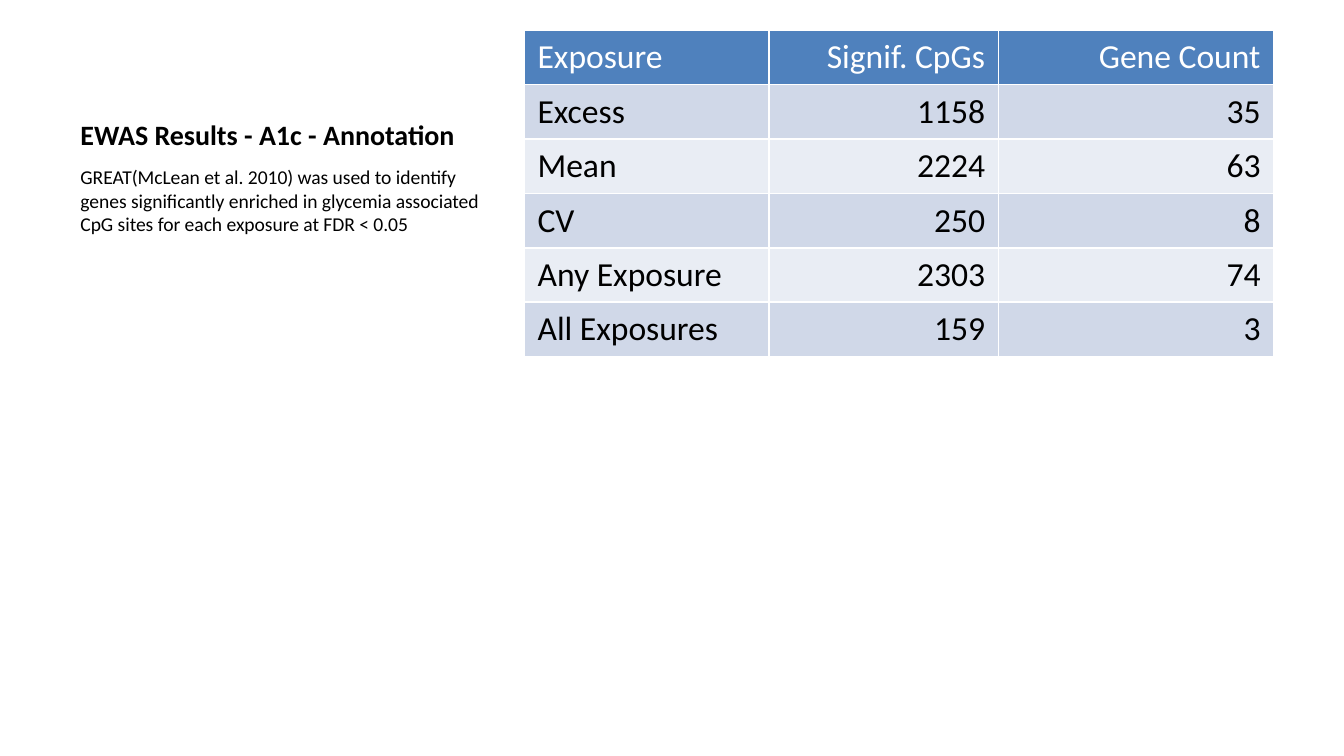
from pptx import Presentation
from pptx.dml.color import RGBColor
from pptx.enum.text import MSO_ANCHOR as Anchor, PP_ALIGN as Align
from pptx.util import Inches, Pt

WIDTH = 10
HEIGHT = WIDTH * 9 / 16

BLACK = RGBColor(0x00, 0x00, 0x00)
WHITE = RGBColor(0xFF, 0xFF, 0xFF)
HEADER_BLUE = RGBColor(0x4F, 0x81, 0xBD)
BANDS = (RGBColor(0xD0, 0xD8, 0xE8), RGBColor(0xE9, 0xED, 0xF4))

RESULTS = [
    ("Exposure", "Signif. CpGs", "Gene Count"),
    ("Excess", 1158, 35),
    ("Mean", 2224, 63),
    ("CV", 250, 8),
    ("Any Exposure", 2303, 74),
    ("All Exposures", 159, 3),
]


class SlideBuilder:
    """Holds the style and the current slide; lengths are in inches."""

    font_name = "Calibri"
    left_column = (0.5, 3.29)    # left, width
    right_column = 3.9
    top = 0.04 * HEIGHT

    def __init__(self, presentation):
        self.slide = presentation.slides.add_slide(presentation.slide_layouts[6])

    def style(self, paragraph, size, color=BLACK, bold=False, align=Align.LEFT):
        font = paragraph.font
        font.name, font.size, font.bold = self.font_name, Pt(size), bold
        font.color.rgb = color
        paragraph.alignment = align

    def text(self, words, top, height, size, bold=False, anchor=Anchor.TOP):
        left, width = self.left_column
        box = self.slide.shapes.add_textbox(*map(Inches, (left, top, width, height)))
        frame = box.text_frame
        frame.word_wrap = True
        frame.vertical_anchor = anchor
        frame.text = words
        self.style(frame.paragraphs[0], size, bold=bold)

    def table(self, rows, widths, height, size):
        shape = self.slide.shapes.add_table(
            len(rows), len(widths), Inches(self.right_column), Inches(self.top),
            Inches(sum(widths)), Inches(height))
        table = shape.table
        for column, width in zip(table.columns, widths):
            column.width = Inches(width)
        for row_index, values in enumerate(rows):
            is_header = row_index == 0
            fill = HEADER_BLUE if is_header else BANDS[(row_index - 1) % 2]
            for column_index, value in enumerate(values):
                cell = table.cell(row_index, column_index)
                cell.fill.solid()
                cell.fill.fore_color.rgb = fill
                cell.text = str(value)
                self.style(cell.text_frame.paragraphs[0], size,
                           color=WHITE if is_header else BLACK,
                           align=Align.RIGHT if column_index else Align.LEFT)


def main():
    presentation = Presentation()
    presentation.slide_width = Inches(WIDTH)
    presentation.slide_height = Inches(HEIGHT)
    builder = SlideBuilder(presentation)

    # Title and explanation in the left column
    builder.text("EWAS Results - A1c - Annotation", builder.top, 0.95, 15,
                 bold=True, anchor=Anchor.BOTTOM)
    builder.text("GREAT(McLean et al. 2010) was used to identify genes significantly "
                 "enriched in glycemia associated CpG sites for each exposure at "
                 "FDR < 0.05", 1.18, 3.85, 10.5)

    # Results per exposure in the right column
    builder.table(RESULTS, (1.82, 1.71, 2.05), 2.43, 18)

    presentation.save("out.pptx")


if __name__ == "__main__":
    main()
